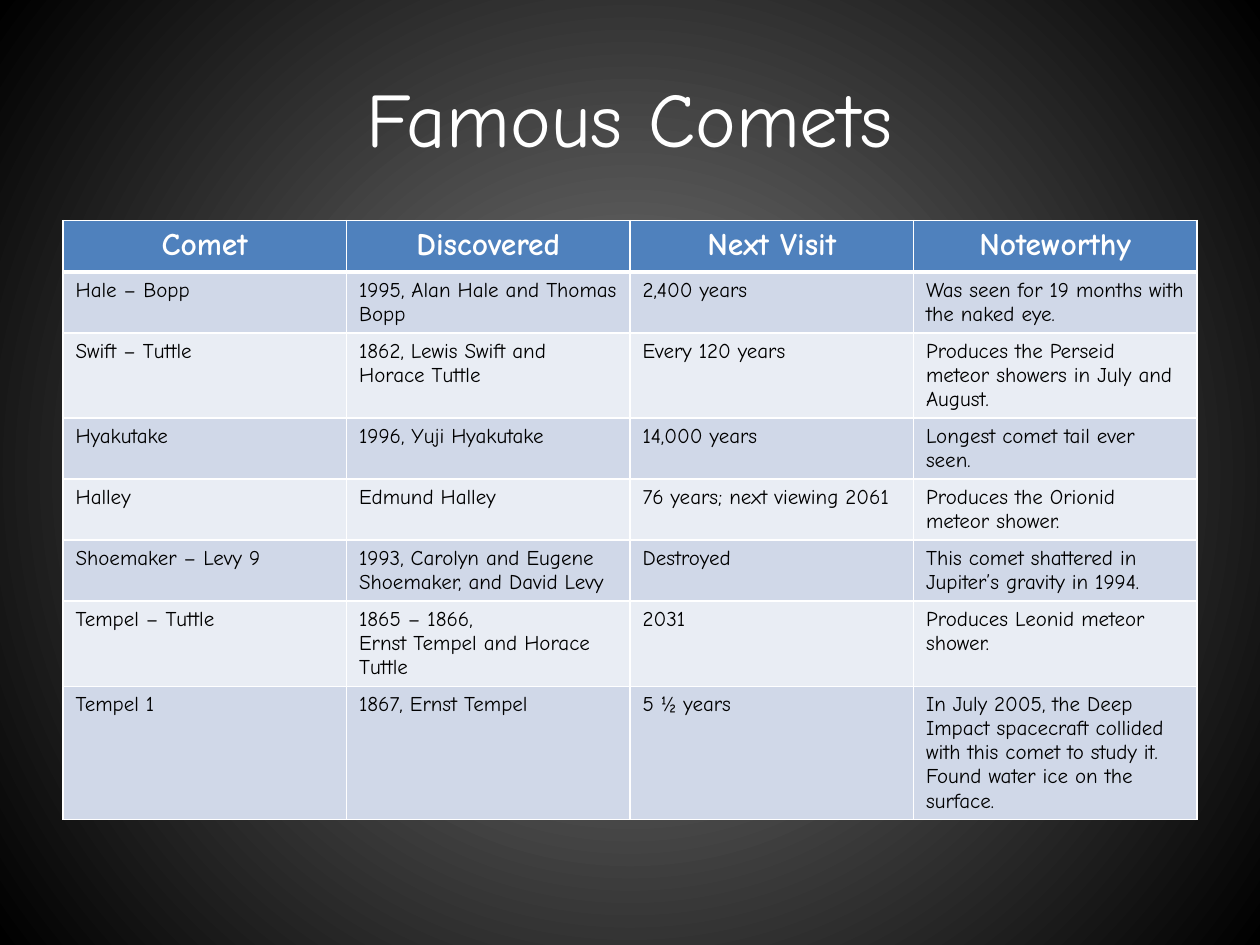
from pptx import Presentation
from pptx import util as u
from pptx.dml import color
from pptx.enum import text
from pptx.oxml import ns, parse_xml

FONT = "Comic Neue"
COLORS = {
    "glow": "7F7F7F",
    "edge": "000000",
    "header": "4F81BD",
    "odd": "D0D8E8",
    "even": "E9EDF4",
    "light": "FFFFFF",
    "dark": "000000",
}
TITLE_FORMAT = {"name": FONT, "size": u.Pt(44), "bold": False}
HEADER_FORMAT = {"name": FONT, "size": u.Pt(18), "bold": True}
BODY_FORMAT = {"name": FONT, "size": u.Pt(12), "bold": False}

HEADINGS = ("Comet", "Discovered", "Next Visit", "Noteworthy")
COMETS = (
    ("Hale – Bopp", "1995, Alan Hale and Thomas Bopp", "2,400 years",
     "Was seen for 19 months with the naked eye."),
    ("Swift – Tuttle", "1862, Lewis Swift and Horace Tuttle", "Every 120 years",
     "Produces the Perseid meteor showers in July and August."),
    ("Hyakutake", "1996, Yuji Hyakutake", "14,000 years",
     "Longest comet tail ever seen."),
    ("Halley", "Edmund Halley", "76 years; next viewing 2061",
     "Produces the Orionid meteor shower."),
    ("Shoemaker – Levy 9", "1993, Carolyn and Eugene Shoemaker, and David Levy",
     "Destroyed", "This comet shattered in Jupiter’s gravity in 1994."),
    ("Tempel – Tuttle", "1865 – 1866,\nErnst Tempel and Horace Tuttle", "2031",
     "Produces Leonid meteor shower."),
    ("Tempel 1", "1867, Ernst Tempel", "5 ½ years",
     "In July 2005, the Deep Impact spacecraft collided with this comet "
     "to study it.  Found water ice on the surface."),
)


def rgb(name):
    return color.RGBColor.from_string(COLORS[name])


def write_text(frame, content, formats, color_name, alignment):
    frame.text = content
    for paragraph in frame.paragraphs:
        paragraph.alignment = alignment
        for run in paragraph.runs:
            for attribute, value in formats.items():
                setattr(run.font, attribute, value)
            run.font.color.rgb = rgb(color_name)


def set_background(slide):
    fill = slide.background.fill
    fill.gradient()
    for stop, name in zip(fill.gradient_stops, ("glow", "edge")):
        stop.color.rgb = rgb(name)
    # Turn the linear gradient into a radial one around the centre
    linear = slide.element.find(".//" + ns.qn("a:lin"))
    linear.getparent().replace(linear, parse_xml(
        f'<a:path {ns.nsdecls("a")} path="circle">'
        '<a:fillToRect l="50000" t="50000" r="50000" b="50000"/></a:path>'))


def add_title(slide, content):
    title = slide.shapes.title
    title.left, title.top = u.Inches(0.5), u.Inches(0.3)
    title.width, title.height = u.Inches(9), u.Inches(1.25)
    title.text_frame.vertical_anchor = text.MSO_ANCHOR.MIDDLE
    write_text(title.text_frame, content, TITLE_FORMAT, "light",
               text.PP_ALIGN.CENTER)


def set_borders(cell, widths):
    properties = cell._tc.get_or_add_tcPr()
    for side, width in widths.items():
        properties.append(parse_xml(
            f'<a:ln{side} {ns.nsdecls("a")} w="{u.Pt(width)}"><a:solidFill>'
            f'<a:srgbClr val="{COLORS["light"]}"/></a:solidFill></a:ln{side}>'))


def add_comet_table(slide):
    rows = (HEADINGS,) + COMETS
    row_height = u.Inches(0.41)
    table = slide.shapes.add_table(
        len(rows), len(HEADINGS), u.Inches(0.5), u.Inches(1.75),
        u.Inches(9), row_height * len(rows)).table
    for row_index, row in enumerate(rows):
        table.rows[row_index].height = row_height
        is_header = row_index == 0
        if is_header:
            style = HEADER_FORMAT, "light", text.PP_ALIGN.CENTER
            fill_name = "header"
        else:
            style = BODY_FORMAT, "dark", text.PP_ALIGN.LEFT
            fill_name = "odd" if row_index % 2 else "even"
        # The rule below the header is heavier than the grid
        widths = {"L": 1, "R": 1, "T": 3 if row_index == 1 else 1,
                  "B": 3 if is_header else 1}
        for column_index, content in enumerate(row):
            cell = table.cell(row_index, column_index)
            write_text(cell.text_frame, content, *style)
            set_borders(cell, widths)
            cell.fill.solid()
            cell.fill.fore_color.rgb = rgb(fill_name)


def main():
    presentation = Presentation()
    presentation.slide_width = u.Inches(10)
    presentation.slide_height = u.Inches(7.5)
    title_only = presentation.slide_layouts[5]
    slide = presentation.slides.add_slide(title_only)
    set_background(slide)
    add_title(slide, "Famous Comets")
    add_comet_table(slide)
    presentation.save("out.pptx")


if __name__ == "__main__":
    main()
